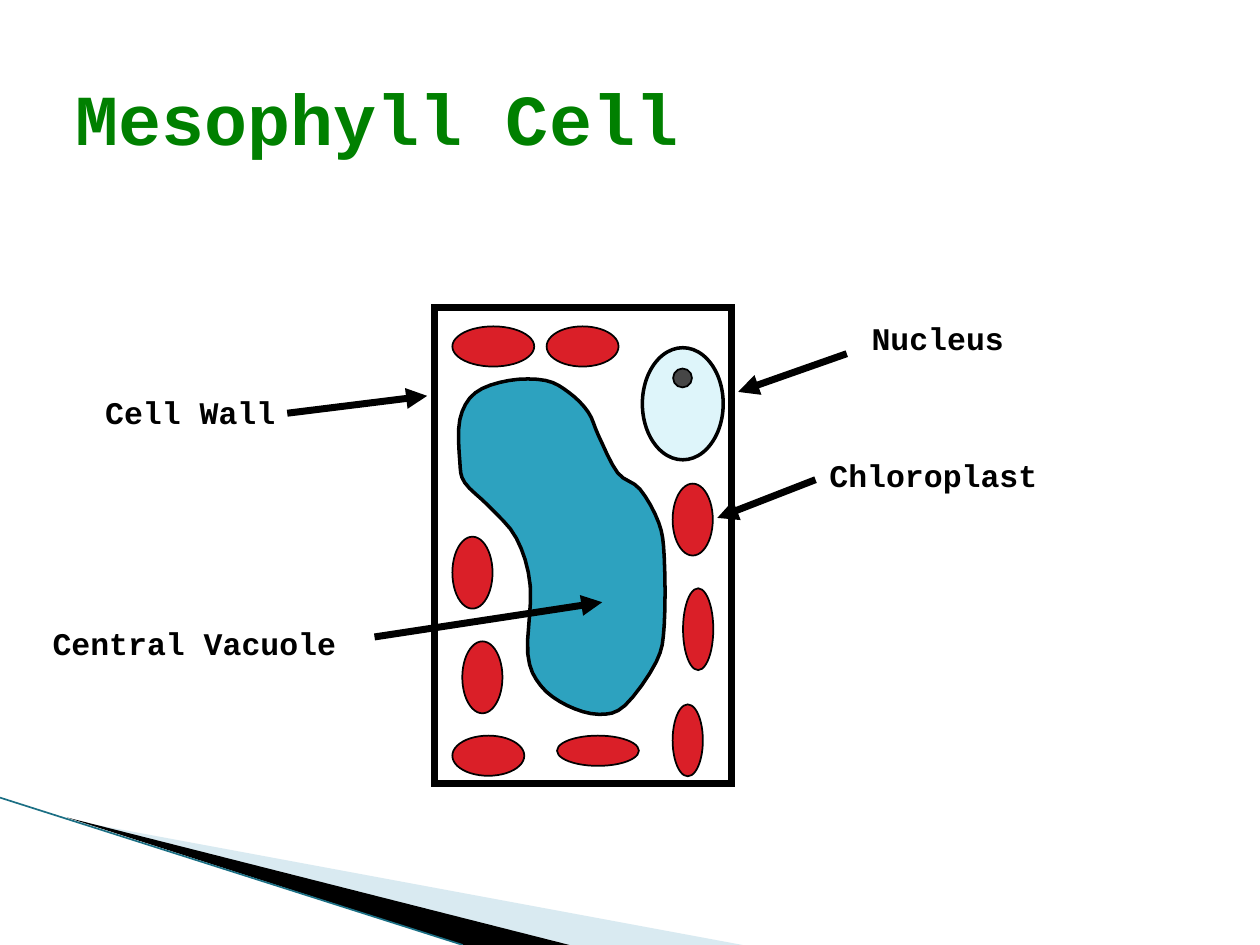
from lxml import etree
from pptx import Presentation
from pptx.dml.color import RGBColor
from pptx.enum.shapes import MSO_CONNECTOR, MSO_SHAPE
from pptx.enum.text import MSO_ANCHOR, MSO_AUTO_SIZE, PP_ALIGN
from pptx.oxml.ns import qn
from pptx.util import Cm, Pt

RECTANGLE, OVAL = MSO_SHAPE.RECTANGLE, MSO_SHAPE.OVAL
STRAIGHT = MSO_CONNECTOR.STRAIGHT
LEFT, MIDDLE = PP_ALIGN.LEFT, MSO_ANCHOR.MIDDLE
FIT_SHAPE = MSO_AUTO_SIZE.SHAPE_TO_FIT_TEXT
BLACK = RGBColor(0x00, 0x00, 0x00)
WHITE = RGBColor(0xFF, 0xFF, 0xFF)
GREEN = RGBColor(0x00, 0x80, 0x00)
RED = RGBColor(0xDA, 0x1F, 0x28)
BLUE = RGBColor(0x2D, 0xA2, 0xBF)
PALE_BLUE = RGBColor(0xDE, 0xF5, 0xFA)
GREY = RGBColor(0x46, 0x46, 0x46)
SWOOSH = RGBColor(0xA0, 0xCB, 0xDC)
TEAL = RGBColor(0x1B, 0x6F, 0x84)
TITLE_FONT = {"name": "Courier New", "size": Pt(41), "bold": True}
LABEL_FONT = {"name": "Courier New", "size": Pt(18), "bold": True}
PAGE_WIDTH, PAGE_HEIGHT = 25.4, 19.05


def add_outline(shapes, points, fill):
    corners = [(Cm(x), Cm(y)) for x, y in points]
    builder = shapes.build_freeform(*corners[0])
    builder.add_line_segments(corners[1:], close=True)
    outline = builder.convert_to_shape()
    outline.shadow.inherit = False
    outline.fill.solid()
    outline.fill.fore_color.rgb = fill
    outline.line.fill.background()
    return outline


def add_line(shapes, start, end, color, width):
    line = shapes.add_connector(STRAIGHT, *[Cm(n) for n in start + end])
    line.line.color.rgb = color
    line.line.width = Pt(width)
    etree.SubElement(line._element.spPr, qn("a:effectLst"))
    return line


deck = Presentation()
deck.slide_width, deck.slide_height = Cm(PAGE_WIDTH), Cm(PAGE_HEIGHT)
page = deck.slides.add_slide(deck.slide_layouts[5])

pale_tip, pale_right, pale_left = (1.4, 16.53), (14.97, PAGE_HEIGHT), (11.48, PAGE_HEIGHT)
black_tip, black_left = (1.35, 16.48), (9.33, PAGE_HEIGHT)
pale_band = add_outline(page.shapes, [pale_tip, pale_right, pale_left], SWOOSH)
pale_color = pale_band._element.spPr.find(qn("a:solidFill"))[0]
etree.SubElement(pale_color, qn("a:alpha"), val="40000")
add_outline(page.shapes, [black_tip, pale_left, black_left], BLACK)
add_line(page.shapes, (0, 16.08), black_left, TEAL, 0.95)

title = page.shapes.title
title.left, title.top, title.width, title.height = Cm(1.27), Cm(0.76), Cm(22.86), Cm(3.18)
title.text_frame.text = "Mesophyll Cell"
title.text_frame.vertical_anchor = MIDDLE
para = title.text_frame.paragraphs[0]
para.alignment = LEFT
for key, value in TITLE_FONT.items():
    setattr(para.font, key, value)
para.font.color.rgb = GREEN

LONG, SHORT, THICK, SLIM = 1.65, 1.45, 0.81, 0.61
LEFT_EDGE, RIGHT_EDGE, TOP_ROW, BOTTOM_ROW = 9.12, 13.56, 6.58, 14.83
chloroplasts = [
    (LEFT_EDGE, TOP_ROW, LONG, THICK),
    (11.02, TOP_ROW, SHORT, THICK),
    (RIGHT_EDGE, 9.75, THICK, SHORT),
    (13.77, 11.86, SLIM, LONG),
    (RIGHT_EDGE, 14.2, SLIM, SHORT),
    (11.23, BOTTOM_ROW, LONG, SLIM),
    (LEFT_EDGE, BOTTOM_ROW, SHORT, THICK),
    (9.32, 12.93, THICK, SHORT),
    (LEFT_EDGE, 10.82, THICK, SHORT),
]
wall = (8.76, 6.2, 5.99, 9.6)
nucleus = (12.95, 7.01, 1.63, 2.26)
nucleolus = (13.57, 7.43, 0.38, 0.38)
parts = [
    (RECTANGLE, wall, WHITE, 4),
    (OVAL, nucleus, PALE_BLUE, 2),
    (OVAL, nucleolus, GREY, 1),
] + [(OVAL, place, RED, 1) for place in chloroplasts]

cell = page.shapes.add_group_shape().shapes
for kind, place, fill, width in parts:
    part = cell.add_shape(kind, *[Cm(n) for n in place])
    part.shadow.inherit = False
    part.fill.solid()
    part.fill.fore_color.rgb = fill
    part.line.color.rgb = BLACK
    part.line.width = Pt(width)
    etree.SubElement(part.line._get_or_add_ln(), qn("a:miter"), lim="800000")

vacuole_sides = {
    "upper right": [(11, 7.67), (11.48, 7.92), (11.86, 8.31), (12.07, 8.79), (12.45, 9.53)],
    "lower right": [(12.9, 9.86), (13.28, 10.54), (13.39, 11.23), (13.39, 12.6), (13.23, 13.34)],
    "bottom": [(12.6, 14.22), (12.07, 14.4), (11.43, 14.22), (10.9, 13.82), (10.64, 13.18)],
    "left": [(10.69, 11.81), (10.41, 10.85), (9.86, 10.21), (9.37, 9.73)],
    "upper left": [(9.27, 9.3), (9.27, 8.46), (9.58, 7.92), (10.26, 7.67)],
}
knots = [knot for side in vacuole_sides.values() for knot in side]
STEPS = 4
vacuole_points = []
for index in range(len(knots)):
    neighbours = [knots[(index + shift) % len(knots)] for shift in (-1, 0, 1, 2)]
    for step in range(STEPS):
        t = step / STEPS
        weights = (
            (-t + 2 * t**2 - t**3) / 2,
            (2 - 5 * t**2 + 3 * t**3) / 2,
            (t + 4 * t**2 - 3 * t**3) / 2,
            (t**3 - t**2) / 2,
        )
        vacuole_points.append([
            sum(weight * knot[axis] for weight, knot in zip(weights, neighbours))
            for axis in (0, 1)
        ])
vacuole = add_outline(cell, vacuole_points, BLUE)
vacuole.line.color.rgb = BLACK
vacuole.line.width = Pt(2)

labels = [
    ("Cell Wall", (1.87, 7.8, 4.04), (5.79, 8.33), (8.61, 7.98)),
    ("Nucleus", (17.32, 6.3, 3.78), (17.07, 7.13), (14.88, 7.9)),
    ("Chloroplast", (16.47, 9.07, 5.21), (16.44, 9.67), (14.46, 10.44)),
    ("Central Vacuole", (0.81, 12.45, 6.91), (7.55, 12.84), (12.14, 12.14)),
]
for text, (left, top, width), start, tip in labels:
    group = page.shapes.add_group_shape().shapes
    arrow = add_line(group, start, tip, BLACK, 4)
    etree.SubElement(arrow.line._get_or_add_ln(), qn("a:tailEnd"), type="triangle")
    box = group.add_textbox(Cm(left), Cm(top), Cm(width), Cm(1.27))
    box.text_frame.word_wrap = False
    box.text_frame.auto_size = FIT_SHAPE
    para = box.text_frame.paragraphs[0]
    para.text = text
    for key, value in LABEL_FONT.items():
        setattr(para.font, key, value)
    para.font.color.rgb = BLACK

deck.save("out.pptx")
